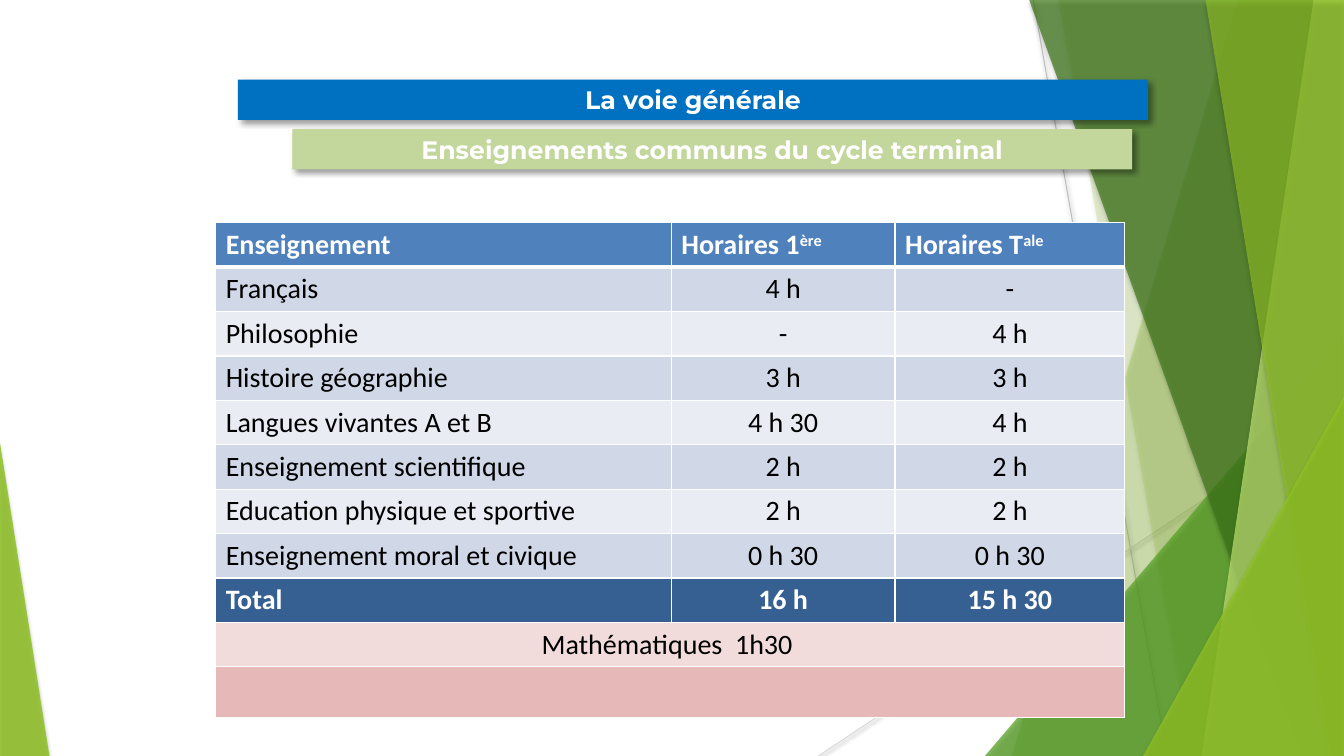
import pptx
import pptx.util
import pptx.dml.color
import pptx.enum.shapes
import pptx.enum.text
import pptx.oxml
import pptx.oxml.ns

COLORS = {
    "white": "FFFFFF", "black": "000000", "blue": "0070C0", "sage": "C3D69B",
    "header": "4F81BD", "band": "D0D8E7", "pale": "E9ECF3", "total": "376092",
    "rose": "F2DCDB", "pink": "E6B9B8", "lime": "90C226", "leaf": "54A021",
    "forest": "3F7819", "light": "C0E474", "gray": "BFBFBF", "silver": "D9D9D9",
}
RGB = pptx.dml.color.RGBColor.from_string
CENTER = pptx.enum.text.PP_ALIGN.CENTER
NS = pptx.oxml.ns.nsdecls("a")

deck = pptx.Presentation()
deck.slide_width = pptx.util.Inches(13.33)
deck.slide_height = pptx.util.Inches(7.5)
page = deck.slides.add_slide(deck.slide_layouts[0])


def place(x, y):
    """Turn percentages of the slide's width and height into lengths."""
    return int(deck.slide_width * x / 100), int(deck.slide_height * y / 100)


def add_shadow(shape, alpha, blur, distance, angle):
    shape._element.spPr.append(pptx.oxml.parse_xml(
        f'<a:effectLst {NS}><a:outerShdw blurRad="{int(blur * 12700)}" '
        f'dist="{int(distance * 12700)}" dir="{angle * 60000}" algn="tl" rotWithShape="0">'
        f'<a:srgbClr val="{COLORS["black"]}"><a:alpha val="{alpha * 1000}"/></a:srgbClr>'
        '</a:outerShdw></a:effectLst>'))


# Thin lines behind the green facets
for start, end, color in [((76.88, 0), (86.85, 100), "gray"),
                          ((100, 53.73), (60.9, 100), "silver")]:
    line = page.shapes.add_connector(
        pptx.enum.shapes.MSO_CONNECTOR.STRAIGHT, *place(*start), *place(*end))
    line.line.color.rgb = RGB(COLORS[color])
    line.line.width = pptx.util.Pt(0.75)
    add_shadow(line, 38, 3.1, 1.6, 90)

# Facets: strips run from a top x and a bottom x to the right edge;
# triangles have left, top, width and apex, and stand on the bottom edge
facets = [
    ("strip", (92.1, 75.3), "lime", 30),
    ("strip", (78.75, 88.65), "lime", 20),
    ("triangle", (73.28, 44.4, 26.72, 1), "leaf", 72),
    ("strip", (76.58, 96.83), "forest", 70),
    ("strip", (97.73, 89.4), "light", 70),
    ("strip", (89.7, 98.85), "lime", 65),
    ("triangle", (85.05, 52.4, 14.95, 1), "lime", 80),
    ("triangle", (0, 58.53, 3.68, 0), "lime", 85),
]
for kind, geometry, color, opacity in facets:
    if kind == "strip":
        top_x, bottom_x = geometry
        outline = page.shapes.build_freeform(*place(top_x, 0))
        outline.add_line_segments(
            [place(100, 0), place(100, 100), place(bottom_x, 100)], close=True)
        facet = outline.convert_to_shape()
    else:
        left, top, width, apex = geometry
        facet = page.shapes.add_shape(
            pptx.enum.shapes.MSO_SHAPE.ISOSCELES_TRIANGLE,
            *place(left, top), *place(width, 100 - top))
        facet.adjustments[0] = apex
    facet.fill.solid()
    facet.fill.fore_color.rgb = RGB(COLORS[color])
    tint = facet._element.spPr.find(".//" + pptx.oxml.ns.qn("a:srgbClr"))
    tint.append(pptx.oxml.parse_xml(f'<a:alpha {NS} val="{opacity * 1000}"/>'))
    facet.line.fill.background()
    add_shadow(facet, 35, 3, 2, 90)

# Title and subtitle banners, brought in front of the facets
banners = [
    (page.placeholders[1], "Enseignements communs du cycle terminal", "sage", 21.75, 17.07, 62.48),
    (page.shapes.title, "La voie générale", "blue", 17.7, 10.53, 67.73),
]
for banner, text, color, left, top, width in banners:
    banner.left, banner.top = place(left, top)
    banner.width, banner.height = place(width, 5.33)
    banner.fill.solid()
    banner.fill.fore_color.rgb = RGB(COLORS[color])
    banner.line.fill.background()
    add_shadow(banner, 40, 4, 3, 45)
    frame = banner.text_frame
    frame.text = text
    frame.auto_size = pptx.enum.text.MSO_AUTO_SIZE.NONE
    frame.vertical_anchor = pptx.enum.text.MSO_ANCHOR.MIDDLE
    para = frame.paragraphs[0]
    para.alignment = CENTER
    para.space_before = pptx.util.Pt(0)
    para.font.name = "Montserrat"
    para.font.size = pptx.util.Pt(18)
    para.font.bold = True
    para.font.color.rgb = RGB(COLORS["white"])
    page.shapes._spTree.append(banner._element)

# Timetable: each heading is a word and its superscript
headings = [("Enseignement", ""), ("Horaires 1", "ère"), ("Horaires T", "ale")]
rows = [
    ("Français", "4 h", "-"),
    ("Philosophie", "-", "4 h"),
    ("Histoire géographie", "3 h", "3 h"),
    ("Langues vivantes A et B", "4 h 30", "4 h"),
    ("Enseignement scientifique", "2 h", "2 h"),
    ("Education physique et sportive", "2 h", "2 h"),
    ("Enseignement moral et civique", "0 h 30", "0 h 30"),
    ("Total", "16 h", "15 h 30"),
    ("Mathématiques  1h30 ", "", ""),
    ("", "", ""),
]
fills = ["header"] + ["band", "pale"] * 3 + ["band", "total", "rose", "pink"]
table = page.shapes.add_table(
    len(fills), 3, *place(16.05, 29.47), *place(67.65, 64.5)).table
for column, share in zip(table.columns, (33.9, 16.65, 17.1)):
    column.width = place(share, 0)[0]
for r, fill in enumerate(fills):
    table.rows[r].height = place(0, 6.67 if fill == "pink" else 5.79)[1]
    merged = fill in ("rose", "pink")
    strong = fill in ("header", "total")
    for c in range(3):
        cell = table.cell(r, c)
        # White borders, thicker under the headings
        for side in "LRTB":
            thick = (r, side) in ((0, "B"), (1, "T"))
            cell._tc.get_or_add_tcPr().append(pptx.oxml.parse_xml(
                f'<a:ln{side} {NS} w="{38100 if thick else 12192}"><a:solidFill>'
                f'<a:srgbClr val="{COLORS["white"]}"/></a:solidFill></a:ln{side}>'))
        cell.fill.solid()
        cell.fill.fore_color.rgb = RGB(COLORS[fill])
        para = cell.text_frame.paragraphs[0]
        para.font.name = "Calibri"
        para.font.size = pptx.util.Pt(20)
        para.font.bold = strong
        para.font.color.rgb = RGB(COLORS["white" if strong else "black"])
        if merged or (r and c):
            para.alignment = CENTER
        word, raised = headings[c] if r == 0 else (rows[r - 1][c], "")
        if word:
            para.add_run().text = word
        if raised:
            span = para.add_run()
            span.text = raised
            span._r.get_or_add_rPr().set("baseline", "30000")
    if merged:
        table.cell(r, 0).merge(table.cell(r, 2))

deck.save("out.pptx")
